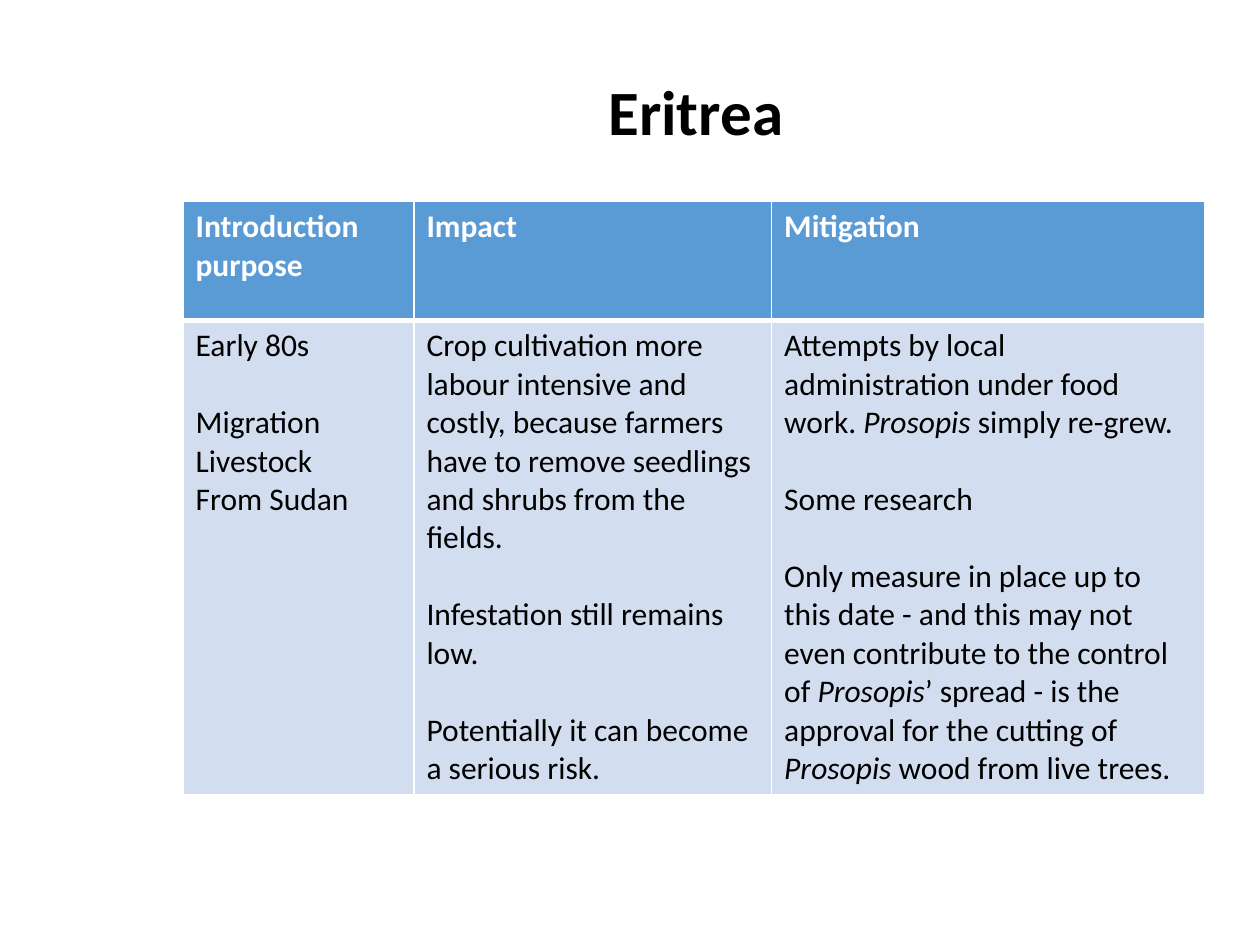
from lxml import etree
from pptx import Presentation
from pptx import util as u
from pptx.dml.color import RGBColor
from pptx.enum import text as t
from pptx.oxml import ns

FONT = "Calibri"
COLORS = {"head": "5B9BD5", "body": "D2DEEF", "rule": "FFFFFF", "ink": "000000"}
HEADS = ["Introduction purpose", "Impact", "Mitigation"]
BODY = [
    [["Early 80s"], ["Migration", "Livestock", "From Sudan"]],
    [
        ["Crop cultivation more labour intensive and costly, because farmers "
         "have to remove seedlings and shrubs from the fields."],
        ["Infestation still remains low."],
        ["Potentially it can become a serious risk."],
    ],
    [
        ["Attempts by local administration under food work. *Prosopis* simply re-grew."],
        ["Some research"],
        ["Only measure in place up to this date - and this may not even "
         "contribute to the control of *Prosopis*’ spread - is the approval "
         "for the cutting of *Prosopis* wood from live trees."],
    ],
]


def color(key):
    return RGBColor.from_string(COLORS[key])


def style(run, size, key, bold=False, slant=False):
    font = run.font
    font.name, font.size = FONT, u.Pt(size)
    font.bold, font.italic = bold, slant
    font.color.rgb = color(key)


def add_rules(cell, widths):
    props = cell._tc.get_or_add_tcPr()
    for side, width in widths.items():
        line = etree.SubElement(props, ns.qn(f"a:ln{side}"), w=str(u.Pt(width)))
        fill = etree.SubElement(line, ns.qn("a:solidFill"))
        etree.SubElement(fill, ns.qn("a:srgbClr"), val=COLORS["rule"])


def fill_cell(cell, groups, back, ink, bold, widths):
    add_rules(cell, widths)
    cell.fill.solid()
    cell.fill.fore_color.rgb = color(back)
    frame = cell.text_frame
    para = None
    for group in groups:
        for place, line in enumerate(group):
            first = para is None
            para = frame.paragraphs[0] if first else frame.add_paragraph()
            if place == 0 and not first:
                para.space_before = u.Pt(22)
            for num, part in enumerate(line.split("*")):
                if part:
                    run = para.add_run()
                    run.text = part
                    style(run, 18, ink, bold, num % 2 == 1)


def add_title(slide, left, top, width, height):
    frame = slide.shapes.add_textbox(left, top, width, height).text_frame
    frame.word_wrap = True
    frame.vertical_anchor = t.MSO_ANCHOR.MIDDLE
    frame.text = "Eritrea"
    para = frame.paragraphs[0]
    para.alignment = t.PP_ALIGN.CENTER
    para.line_spacing = 0.9
    style(para.runs[0], 36, "ink", True)


def add_grid(slide, left, top, width, height):
    table = slide.shapes.add_table(2, len(HEADS), left, top, width, height).table
    shares = [0.226, 0.35, 0.424]
    for col, share in zip(table.columns, shares):
        col.width = int(width * share)
    table.rows[0].height = u.Cm(2.4)
    table.rows[1].height = height - u.Cm(2.4)
    for num, (head, groups) in enumerate(zip(HEADS, BODY)):
        fill_cell(table.cell(0, num), [[head]], "head", "rule", True,
                  {"L": 1, "R": 1, "T": 1, "B": 3})
        fill_cell(table.cell(1, num), groups, "body", "ink", False,
                  {"L": 1, "R": 1, "T": 3, "B": 1})


def main():
    deck = Presentation()
    deck.slide_width, deck.slide_height = u.Cm(25.4), u.Cm(19.05)
    slide = deck.slides.add_slide(deck.slide_layouts[6])
    add_grid(slide, u.Cm(3.69), u.Cm(4.06), u.Cm(20.6), u.Cm(11.95))
    add_title(slide, u.Cm(3.48), u.Cm(0.48), u.Cm(21.1), u.Cm(3.68))
    deck.save("out.pptx")


if __name__ == "__main__":
    main()
